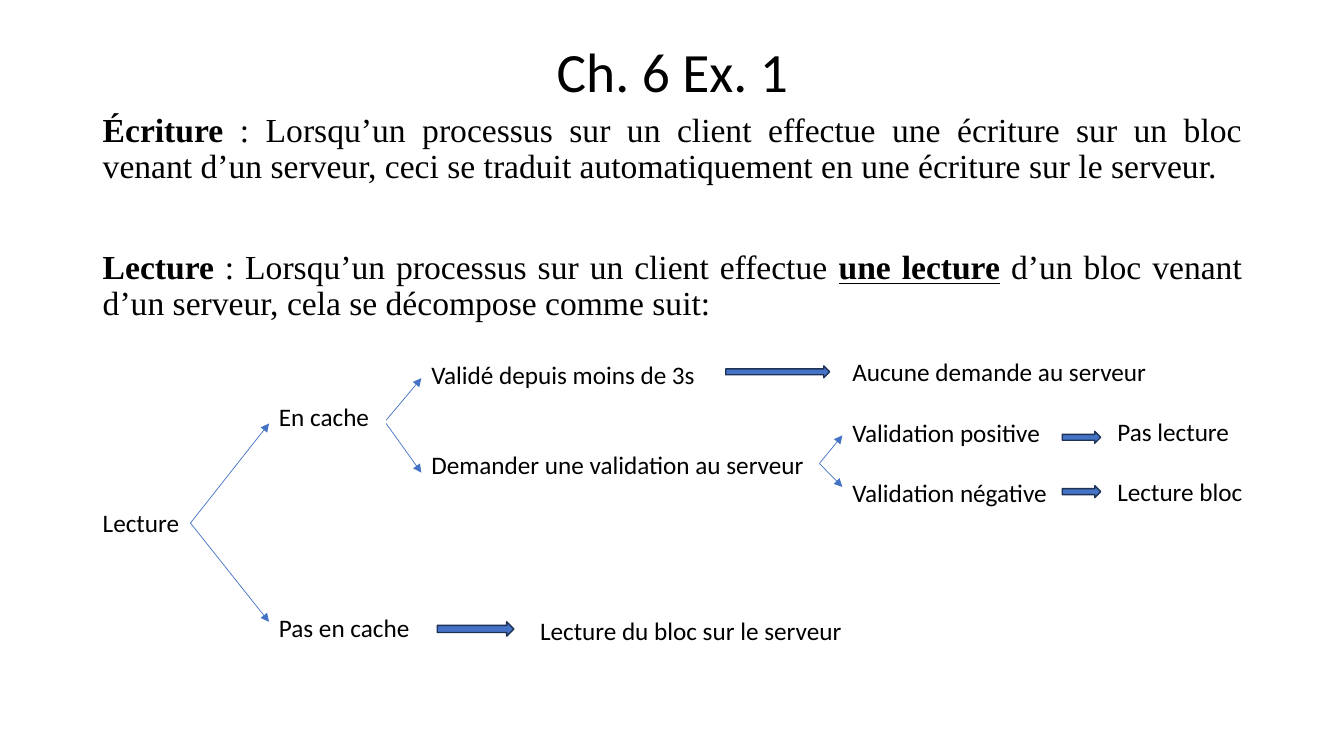
from typing import NamedTuple

from lxml import etree
from pptx import Presentation
from pptx import util as u
from pptx.dml.color import RGBColor
from pptx.enum import shapes, text
from pptx.oxml import ns

BLACK, BLUE, NAVY = "000000", "4472C4", "1E3256"
MARGIN, CONTENT_WIDTH = 2.34, 29.21
BLANK_LINE = 21.5  # height in points of one 18 pt line


class Label(NamedTuple):
    left: float
    top: float
    width: float
    height: float
    lines: tuple[str, ...]
    skipped: int = 0  # line heights left open between the lines


class BlockArrow(NamedTuple):
    left: float
    top: float
    width: float
    height: float


class Branch(NamedTuple):
    start: tuple[float, float]
    end: tuple[float, float]


class Span(NamedTuple):
    words: str
    bold: bool = False
    underline: bool = False


BODY = (
    (
        Span("Écriture", bold=True),
        Span(" : Lorsqu’un processus sur un client effectue une écriture sur un bloc "
             "venant d’un serveur, ceci se traduit automatiquement en une écriture "
             "sur le serveur."),
    ),
    (
        Span("Lecture", bold=True),
        Span(" : Lorsqu’un processus sur un client effectue "),
        Span("une lecture", bold=True, underline=True),
        Span(" d’un bloc venant d’un serveur, cela se décompose comme suit:"),
    ),
)
BODY_SPACING = (10, 46)

LABELS = (
    Label(MARGIN, 12.67, 2.46, 1.02, ("Lecture",)),
    Label(6.78, 9.98, 3.84, 6.4, ("En cache", "Pas en cache"), 6),
    Label(13.36, 15.39, 8.2, 1.02, ("Lecture du bloc sur le serveur",)),
    Label(10.62, 8.92, 10.03, 3.33,
          ("Validé depuis moins de 3s", "Demander une validation au serveur"), 2),
    Label(21.23, 8.86, 8.03, 1.02, ("Aucune demande au serveur",)),
    Label(21.23, 10.39, 5.49, 2.57, ("Validation positive", "Validation négative"), 1),
    Label(27.91, 10.36, 3.71, 2.57, ("Pas lecture", "Lecture bloc"), 1),
)

BLOCK_ARROWS = (
    BlockArrow(11.02, 15.67, 1.93, 0.36),
    BlockArrow(18.29, 9.22, 2.62, 0.3),
    BlockArrow(26.77, 10.87, 0.97, 0.3),
    BlockArrow(26.77, 12.24, 0.97, 0.3),
)

BRANCHES = (
    Branch((4.8, 13.18), (6.78, 10.67)),
    Branch((4.8, 13.18), (6.78, 15.67)),
    Branch((9.73, 10.59), (10.62, 9.53)),
    Branch((9.73, 10.67), (10.62, 11.91)),
    Branch((20.65, 11.68), (21.23, 10.97)),
    Branch((20.65, 11.68), (21.23, 12.27)),
)


def color(value: str) -> RGBColor:
    return RGBColor.from_string(value)


def set_font(para, name: str, size: float) -> None:
    para.font.name = name
    para.font.size = u.Pt(size)
    para.font.color.rgb = color(BLACK)


def add_box(page, left: float, top: float, width: float, height: float, wrap: bool):
    box = page.shapes.add_textbox(u.Cm(left), u.Cm(top), u.Cm(width), u.Cm(height))
    box.text_frame.word_wrap = wrap
    return box.text_frame


def next_paragraph(frame, index: int):
    return frame.add_paragraph() if index else frame.paragraphs[0]


def draw_title(page) -> None:
    frame = add_box(page, MARGIN, 1.02, CONTENT_WIDTH, 1.73, wrap=True)
    frame.vertical_anchor = text.MSO_ANCHOR.MIDDLE
    para = frame.paragraphs[0]
    para.text = "Ch. 6 Ex. 1"
    para.alignment = text.PP_ALIGN.CENTER
    para.line_spacing = 0.9
    set_font(para, "Calibri", 39.6)


def draw_body(page) -> None:
    frame = add_box(page, MARGIN, 2.74, CONTENT_WIDTH, 6.17, wrap=True)
    for index, (spans, spacing) in enumerate(zip(BODY, BODY_SPACING)):
        para = next_paragraph(frame, index)
        para.alignment = text.PP_ALIGN.JUSTIFY
        para.line_spacing = 0.9
        para.space_before = u.Pt(spacing)
        set_font(para, "Times New Roman", 24)
        for span in spans:
            run = para.add_run()
            run.text = span.words
            run.font.bold = span.bold
            run.font.underline = span.underline


def draw_label(page, label: Label) -> None:
    frame = add_box(page, label.left, label.top, label.width, label.height, wrap=False)
    frame.auto_size = text.MSO_AUTO_SIZE.SHAPE_TO_FIT_TEXT
    for index, line in enumerate(label.lines):
        para = next_paragraph(frame, index)
        para.text = line
        set_font(para, "Calibri", 18)
        if index:
            para.space_before = u.Pt(label.skipped * BLANK_LINE)


def draw_block_arrow(page, arrow: BlockArrow) -> None:
    shape = page.shapes.add_shape(shapes.MSO_SHAPE.RIGHT_ARROW, *map(u.Cm, arrow))
    shape.shadow.inherit = False
    shape.fill.solid()
    shape.fill.fore_color.rgb = color(BLUE)
    shape.line.color.rgb = color(NAVY)
    shape.line.width = u.Pt(1)


def draw_branch(page, branch: Branch) -> None:
    line = page.shapes.add_connector(
        shapes.MSO_CONNECTOR.STRAIGHT, *map(u.Cm, branch.start + branch.end))
    line.line.color.rgb = color(BLUE)
    line.line.width = u.Pt(0.5)
    properties = line._element.spPr
    etree.SubElement(properties.find(ns.qn("a:ln")), ns.qn("a:tailEnd"), type="triangle")
    etree.SubElement(properties, ns.qn("a:effectLst"))


def main() -> None:
    deck = Presentation()
    deck.slide_width, deck.slide_height = u.Cm(33.87), u.Cm(19.05)
    page = deck.slides.add_slide(deck.slide_layouts[6])

    # Heading and explanation
    draw_title(page)
    draw_body(page)

    # Decision tree of a read
    for label in LABELS:
        draw_label(page, label)
    for branch in BRANCHES:
        draw_branch(page, branch)
    for arrow in BLOCK_ARROWS:
        draw_block_arrow(page, arrow)

    deck.save("out.pptx")


if __name__ == "__main__":
    main()
